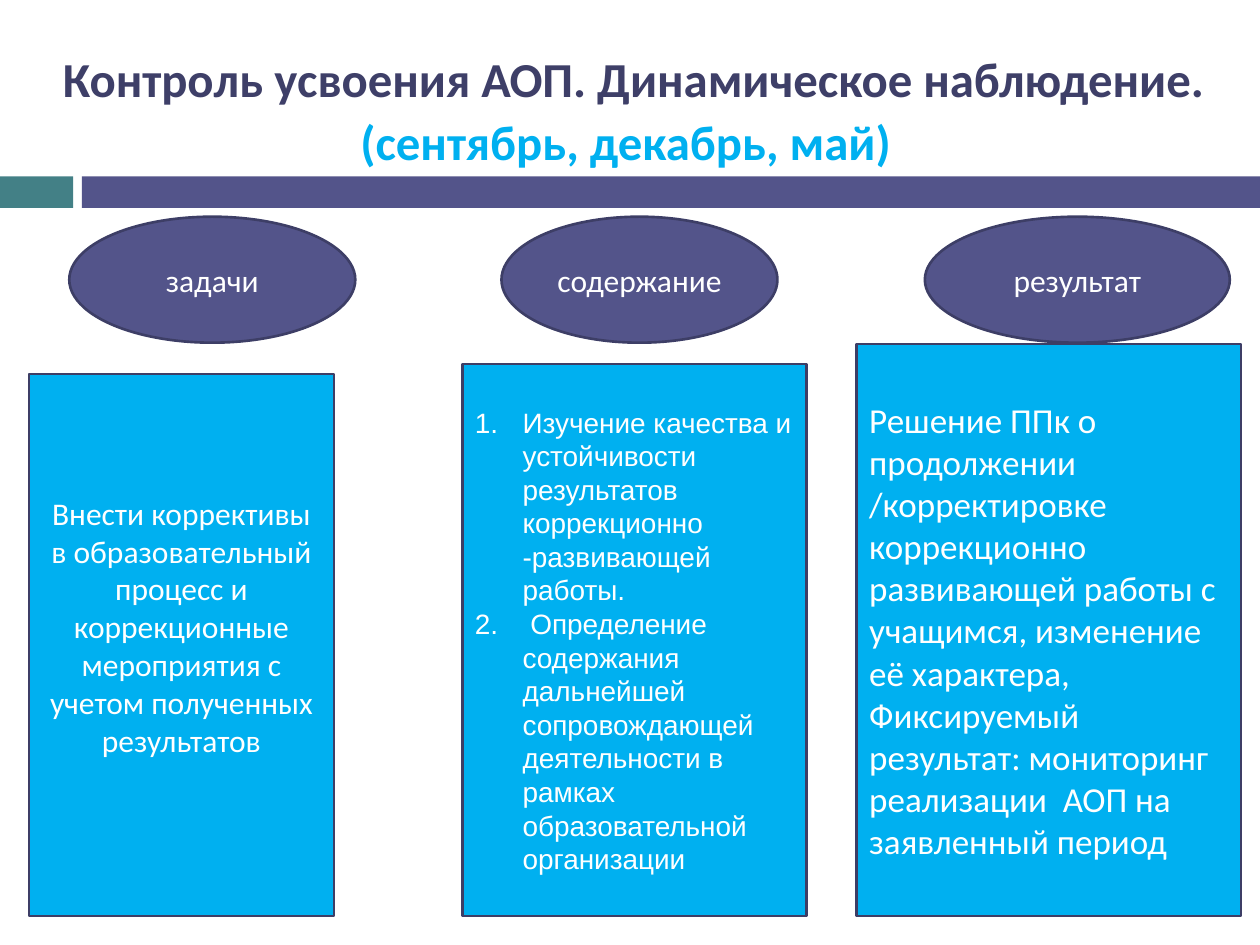
from lxml import etree
from pptx import Presentation
from pptx.dml.color import RGBColor
from pptx.enum.shapes import MSO_SHAPE
from pptx.enum.text import MSO_ANCHOR, PP_ALIGN
from pptx.oxml.ns import qn
from pptx.util import Inches, Pt

RECT, OVAL = MSO_SHAPE.RECTANGLE, MSO_SHAPE.OVAL
LEFT, CENTER = PP_ALIGN.LEFT, PP_ALIGN.CENTER
MIDDLE = MSO_ANCHOR.MIDDLE

COLORS = {
    "teal": "438086",
    "violet": "53548A",
    "outline": "3D3E66",
    "sky": "00B0F0",
    "white": "FFFFFF",
    "title": "3E3F68",
}


def rgb(name):
    return RGBColor.from_string(COLORS[name])


def add_text(paragraph, text, size=18, font="Calibri", color="white", bold=False):
    run = paragraph.add_run()
    run.text = text
    run.font.size = Pt(size)
    run.font.name = font
    run.font.bold = bold
    run.font.color.rgb = rgb(color)


def number_paragraph(paragraph, indent=0.38):
    """Give the paragraph a 1., 2., ... number with a hanging indent."""
    properties = paragraph._p.get_or_add_pPr()
    properties.set("marL", str(Inches(indent)))
    properties.set("indent", str(-Inches(indent)))
    numbering = etree.SubElement(properties, qn("a:buAutoNum"))
    numbering.set("type", "arabicPeriod")


class SlideBuilder:
    def __init__(self, slide):
        self.slide = slide

    def block(self, preset, left, top, width, height, fill, outline=None):
        shape = self.slide.shapes.add_shape(
            preset, Inches(left), Inches(top), Inches(width), Inches(height))
        shape.shadow.inherit = False
        shape.fill.solid()
        shape.fill.fore_color.rgb = rgb(fill)
        if outline:
            shape.line.color.rgb = rgb(outline)
            shape.line.width = Pt(1.5)
        else:
            shape.line.fill.background()
        return shape

    def title(self, heading, months):
        box = self.slide.shapes.add_textbox(
            Inches(0.16), Inches(0.25), Inches(9.61), Inches(1.08))
        frame = box.text_frame
        frame.word_wrap = True
        frame.vertical_anchor = MIDDLE
        paragraph = frame.paragraphs[0]
        paragraph.alignment = CENTER
        add_text(paragraph, " ", size=39.6, color="title")
        add_text(paragraph, heading, size=27.9, color="title", bold=True)
        paragraph.add_line_break()
        add_text(paragraph, months, size=27.9, color="sky", bold=True)

    def panel(self, preset, left, top, width, height, fill, paragraphs,
              align=CENTER, numbered=False, bottom_inset=0.05, **text_format):
        shape = self.block(preset, left, top, width, height, fill, "outline")
        frame = shape.text_frame
        frame.word_wrap = True
        frame.vertical_anchor = MIDDLE
        frame.margin_bottom = Inches(bottom_inset)
        for index, text in enumerate(paragraphs):
            paragraph = frame.add_paragraph() if index else frame.paragraphs[0]
            paragraph.alignment = align
            if numbered:
                number_paragraph(paragraph)
            add_text(paragraph, text, **text_format)

    def heading(self, left, width, text):
        self.panel(OVAL, left, 1.72, width, 1, "violet", [text])

    def card(self, left, top, width, paragraphs, **options):
        """Add a text card that reaches down to the common bottom edge."""
        bottom = 7.27
        self.panel(RECT, left, top, width, bottom - top, "sky", paragraphs, **options)


def main():
    presentation = Presentation()
    presentation.slide_width = Inches(10)
    presentation.slide_height = Inches(7.5)
    builder = SlideBuilder(
        presentation.slides.add_slide(presentation.slide_layouts[6]))

    builder.block(RECT, 0, 1.4, 0.58, 0.25, "teal")
    builder.block(RECT, 0.65, 1.4, 9.35, 0.25, "violet")
    builder.title("Контроль усвоения АОП. Динамическое наблюдение.",
                  "(сентябрь, декабрь, май)")

    for left, width, text in [(7.34, 2.42, "результат"),
                              (0.55, 2.27, "задачи"),
                              (3.98, 2.19, "содержание")]:
        builder.heading(left, width, text)

    builder.card(3.67, 2.89, 2.73, [
        "Изучение качества и устойчивости результатов коррекционно "
        "-развивающей работы.",
        " Определение содержания дальнейшей сопровождающей деятельности "
        "в рамках образовательной организации",
    ], align=LEFT, numbered=True, size=16, font="Arial")
    builder.card(0.23, 2.97, 2.42, [
        "Внести коррективы в образовательный процесс и коррекционные "
        "мероприятия с учетом полученных результатов",
    ], bottom_inset=0.35)
    builder.card(6.8, 2.73, 3.05, [
        "Решение ППк о продолжении /корректировке коррекционно развивающей "
        "работы с учащимся, изменение её характера,",
        "Фиксируемый результат: мониторинг реализации  АОП на заявленный период",
    ], align=LEFT, size=20)

    presentation.save("out.pptx")


if __name__ == "__main__":
    main()
